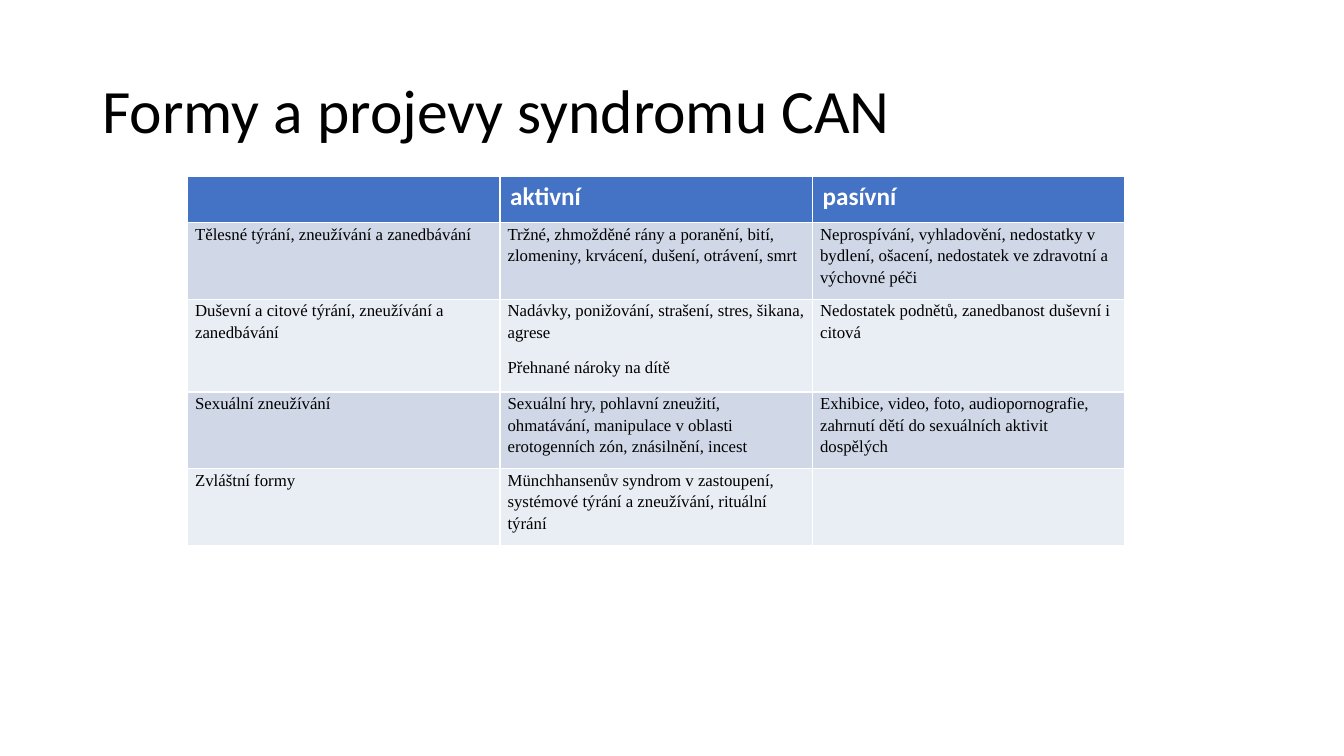
from pptx import Presentation
from pptx.dml.color import RGBColor
from pptx.enum import text
from pptx.util import Pt

TITLE_BOX = (66, 28.75, 828, 104.4)
TABLE_BOX = (134, 126, 669.6, 263.5)
ROW_HEIGHTS = (33, 54.75, 66.25, 54.75, 54.75)
HEADER_FILL = "4472C4"
BAND_FILLS = ("D0D8E8", "E9EDF4")

HEADINGS = ("", "aktivní", "pasívní")
FORMS = (
    ("Tělesné týrání, zneužívání a zanedbávání",
     "Tržné, zhmožděné rány a poranění, bití, zlomeniny, krvácení, dušení, otrávení, smrt",
     "Neprospívání, vyhladovění, nedostatky v bydlení, ošacení, "
     "nedostatek ve zdravotní a výchovné péči"),
    ("Duševní a citové týrání, zneužívání a zanedbávání",
     "Nadávky, ponižování, strašení, stres, šikana, agrese\nPřehnané nároky na dítě",
     "Nedostatek podnětů, zanedbanost duševní i citová"),
    ("Sexuální zneužívání",
     "Sexuální hry, pohlavní zneužití, ohmatávání, manipulace v oblasti "
     "erotogenních zón, znásilnění, incest",
     "Exhibice, video, foto, audiopornografie, zahrnutí dětí do sexuálních aktivit dospělých"),
    ("Zvláštní formy",
     "Münchhansenův syndrom v zastoupení, systémové týrání a zneužívání, rituální týrání",
     ""),
)


def color(value):
    return RGBColor.from_string(value)


def add_span(para, wording, font, size, fill, bold=False):
    span = para.add_run()
    span.text = wording
    span.font.name = font
    span.font.size = Pt(size)
    span.font.bold = bold
    span.font.color.rgb = color(fill)


def fill_title(page, box):
    title = page.shapes.title
    title.left, title.top, title.width, title.height = map(Pt, box)
    frame = title.text_frame
    frame.word_wrap = True
    frame.auto_size = text.MSO_AUTO_SIZE.NONE
    frame.vertical_anchor = text.MSO_ANCHOR.MIDDLE
    para = frame.paragraphs[0]
    para.alignment = text.PP_ALIGN.LEFT
    para.line_spacing = 0.9
    add_span(para, "Formy a projevy syndromu CAN", "Calibri", 44, "000000")


def fill_body_cell(cell, wording):
    """Write one paragraph for each line of the wording."""
    cell.margin_left = cell.margin_right = Pt(5.4)
    cell.margin_top = cell.margin_bottom = Pt(0)
    for index, line in enumerate(wording.split("\n")):
        frame = cell.text_frame
        para = frame.add_paragraph() if index else frame.paragraphs[0]
        para.line_spacing = 1.15
        para.space_after = Pt(10)
        add_span(para, line, "Times New Roman", 12, "000000")


def add_forms_table(page, box):
    rows = (HEADINGS,) + FORMS
    table = page.shapes.add_table(len(rows), len(HEADINGS), *map(Pt, box)).table
    for column in table.columns:
        column.width = Pt(box[2] / len(HEADINGS))
    for row_index, wordings in enumerate(rows):
        table.rows[row_index].height = Pt(ROW_HEIGHTS[row_index])
        fill = BAND_FILLS[(row_index - 1) % 2] if row_index else HEADER_FILL
        for column_index, wording in enumerate(wordings):
            cell = table.cell(row_index, column_index)
            cell.fill.solid()
            cell.fill.fore_color.rgb = color(fill)
            if not wording:
                continue
            if row_index:
                fill_body_cell(cell, wording)
            else:
                para = cell.text_frame.paragraphs[0]
                add_span(para, wording, "Calibri", 18, "FFFFFF", bold=True)


def main():
    deck = Presentation()
    deck.slide_width, deck.slide_height = Pt(960), Pt(540)
    page = deck.slides.add_slide(deck.slide_layouts.get_by_name("Title Only"))
    fill_title(page, TITLE_BOX)
    add_forms_table(page, TABLE_BOX)
    deck.save("out.pptx")


if __name__ == "__main__":
    main()
